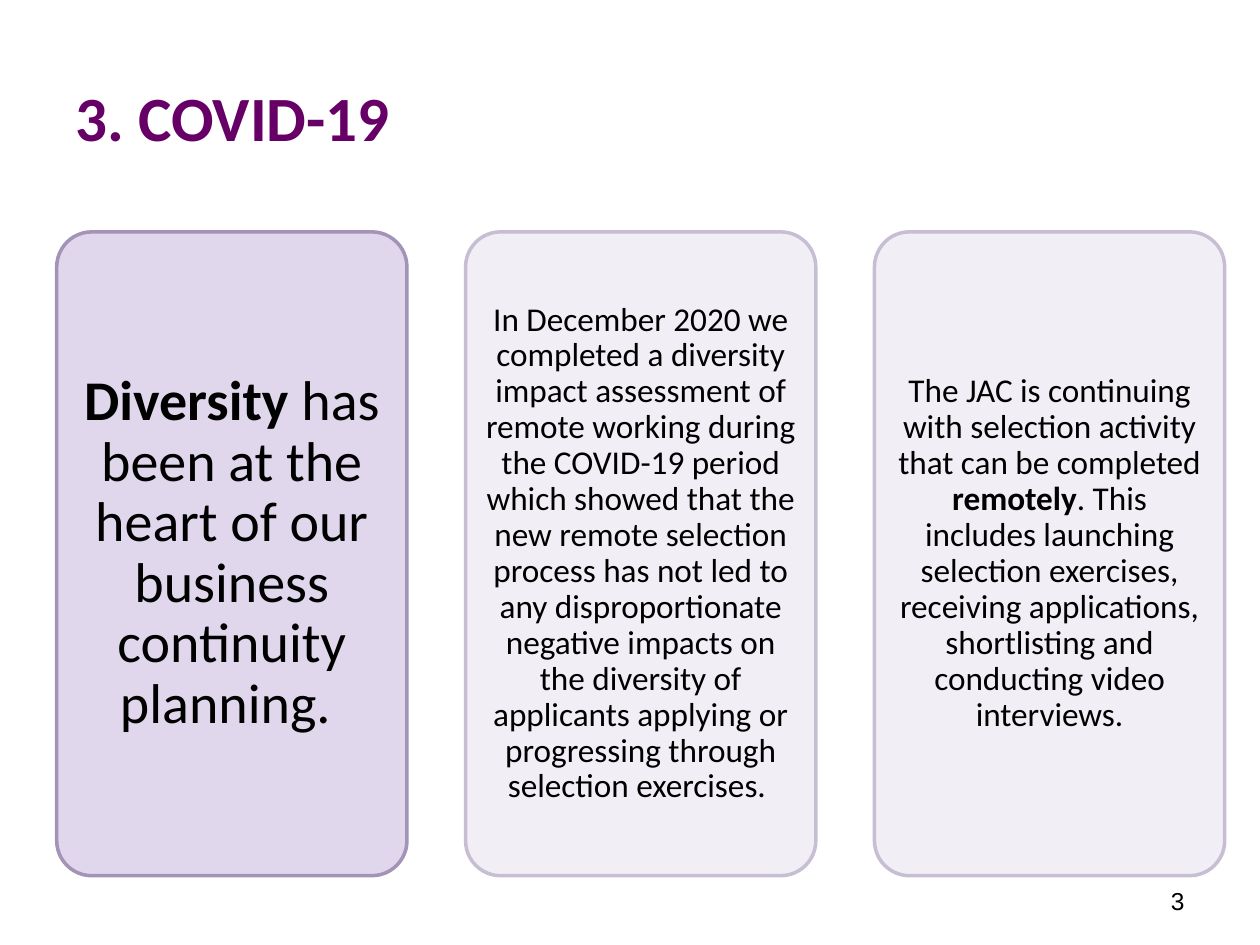
"""Build the COVID-19 slide with three rounded text cards."""
from dataclasses import dataclass

from pptx import Presentation
from pptx.dml.color import RGBColor
from pptx.enum.shapes import MSO_SHAPE
from pptx.enum.text import MSO_ANCHOR as Anchor, MSO_AUTO_SIZE as AutoSize, PP_ALIGN as Align
from pptx.slide import Slide
from pptx.util import Inches, Pt

CARD_LEFT, CARD_TOP = 0.45, 1.84
CARD_WIDTH, CARD_HEIGHT = 2.78, 5.11
CARD_PITCH = 3.245


@dataclass(frozen=True)
class Card:
    """One card, with its text as (wording, bold) runs."""
    runs: tuple[tuple[str, bool], ...]
    size: int = 19
    inset: float = 0.08
    fill: str = "F2EEF6"
    line: str = "C7BED4"


CARDS = (
    Card(
        (("Diversity", True),
         (" has been at the heart of our business continuity planning. ", False)),
        size=32, inset=0.13, fill="E0D7ED", line="A293B7",
    ),
    Card((
        ("In December 2020 we completed a diversity impact assessment of remote "
         "working during the COVID-19 period which showed that the new remote "
         "selection process has not led to any disproportionate negative impacts "
         "on the diversity of applicants applying or progressing through "
         "selection exercises. ", False),
    )),
    Card((
        ("The JAC is continuing with selection activity that can be completed ", False),
        ("remotely", True),
        (". This includes launching selection exercises, receiving applications, "
         "shortlisting and conducting video interviews.", False),
    )),
)


def color(value: str) -> RGBColor:
    """Turn a hex string into a colour."""
    return RGBColor.from_string(value)


def set_font(font, name: str, size: int, value: str) -> None:
    """Set the typeface, size and colour of a font."""
    font.name, font.size = name, Pt(size)
    font.color.rgb = color(value)


def format_title(slide: Slide, text: str) -> None:
    """Fill, move and format the title placeholder."""
    title = slide.shapes.title
    title.left, title.top = Inches(0.5), Inches(0.3)
    title.width, title.height = Inches(9), Inches(1.25)
    frame = title.text_frame
    frame.text = text
    frame.auto_size = AutoSize.NONE
    frame.vertical_anchor = Anchor.MIDDLE
    paragraph = frame.paragraphs[0]
    paragraph.alignment = Align.LEFT
    set_font(paragraph.font, "Calibri", 36, "660066")
    paragraph.font.bold = True


def add_card(slide: Slide, card: Card, left: float) -> None:
    """Draw a rounded card with its text centred inside."""
    shape = slide.shapes.add_shape(
        MSO_SHAPE.ROUNDED_RECTANGLE, Inches(left), Inches(CARD_TOP),
        Inches(CARD_WIDTH), Inches(CARD_HEIGHT))
    shape.adjustments[0] = 0.1
    shape.shadow.inherit = False
    shape.fill.solid()
    shape.fill.fore_color.rgb = color(card.fill)
    shape.line.color.rgb = color(card.line)
    shape.line.width = Pt(2)
    frame = shape.text_frame
    frame.word_wrap = True
    frame.vertical_anchor = Anchor.MIDDLE
    frame.margin_left = frame.margin_right = Inches(card.inset)
    frame.margin_top = frame.margin_bottom = Inches(card.inset)
    paragraph = frame.paragraphs[0]
    paragraph.alignment = Align.CENTER
    paragraph.line_spacing = 0.9
    set_font(paragraph.font, "Calibri", card.size, "000000")
    for text, bold in card.runs:
        run = paragraph.add_run()
        run.text = text
        run.font.bold = bold


def add_slide_number(slide: Slide, number: str) -> None:
    """Write the slide number at the bottom right."""
    box = slide.shapes.add_textbox(Inches(7.17), Inches(6.95), Inches(2.33), Inches(0.4))
    frame = box.text_frame
    frame.word_wrap = True
    frame.vertical_anchor = Anchor.MIDDLE
    paragraph = frame.paragraphs[0]
    paragraph.text = number
    paragraph.alignment = Align.RIGHT
    set_font(paragraph.font, "Arial", 14, "000000")


def main() -> None:
    """Build and save the presentation."""
    presentation = Presentation()
    presentation.slide_width, presentation.slide_height = Inches(10), Inches(7.5)
    slide = presentation.slides.add_slide(presentation.slide_layouts[5])
    format_title(slide, "3. COVID-19")
    add_slide_number(slide, "3")
    for index, card in enumerate(CARDS):
        add_card(slide, card, CARD_LEFT + index * CARD_PITCH)
    presentation.save("out.pptx")


if __name__ == "__main__":
    main()
